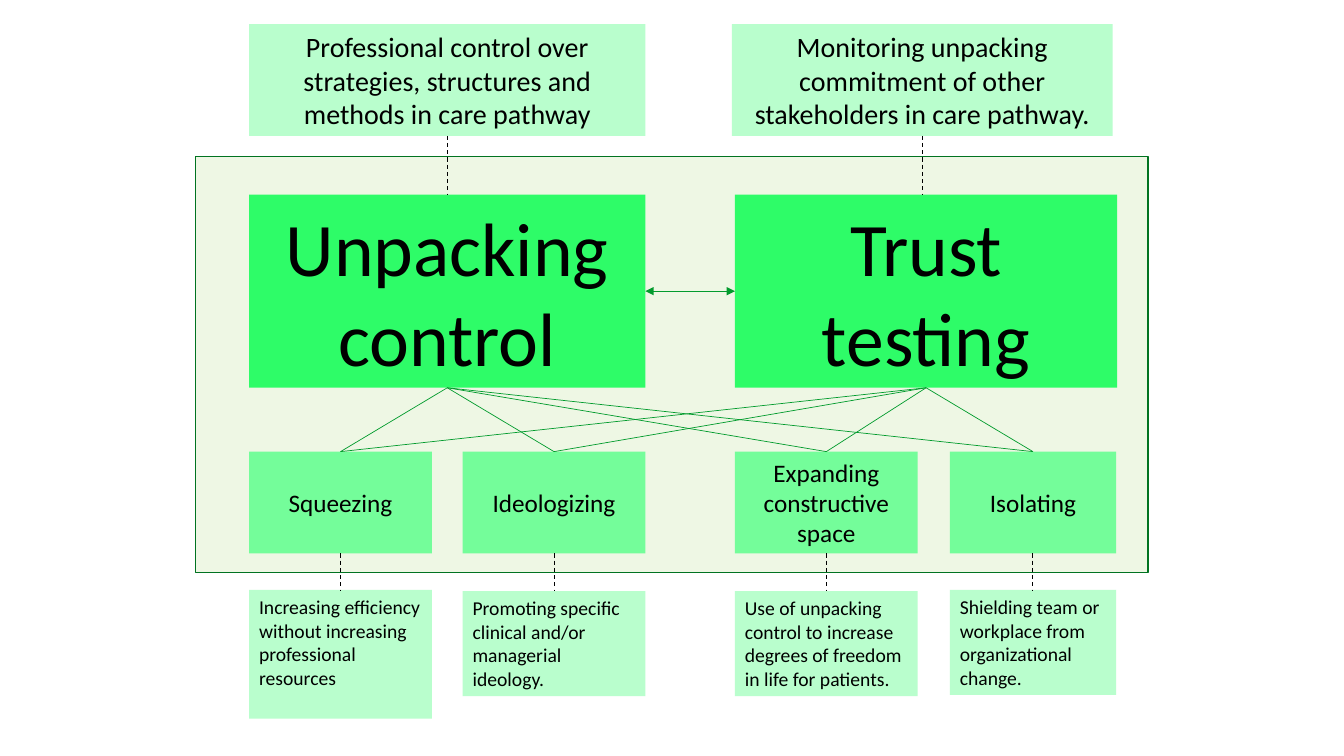
import pptx
import pptx.util
import pptx.dml.color
import pptx.enum.dml
import pptx.enum.shapes
import pptx.enum.text
import pptx.oxml.ns
import lxml.etree

Pt = pptx.util.Pt
RGBColor = pptx.dml.color.RGBColor
Align = pptx.enum.text.PP_ALIGN
Anchor = pptx.enum.text.MSO_ANCHOR

BLACK = RGBColor(0x00, 0x00, 0x00)
FRAME_FILL = RGBColor(0x92, 0xD0, 0x50)
FRAME_LINE = RGBColor(0x01, 0x73, 0x21)
LINK_GREEN = RGBColor(0x02, 0x9B, 0x2D)
STRONG_GREEN = RGBColor(0x2E, 0xFC, 0x68)
MEDIUM_GREEN = RGBColor(0x74, 0xFD, 0x9A)
PALE_GREEN = RGBColor(0xB9, 0xFE, 0xCD)

FRAME = (139.7, 111.6, 680.4, 297.4)
FRAME_OPACITY = 15

THEMES = [
    {"title": "Unpacking control", "left": 178, "width": 283,
     "note": "Professional control over strategies, structures and methods in care pathway",
     "note_left": 178, "note_width": 283},
    {"title": "Trust testing", "left": 525, "width": 273,
     "note": "Monitoring unpacking commitment of other stakeholders in care pathway.",
     "note_left": 522.8, "note_width": 272},
]
STRATEGIES = [
    {"title": "Squeezing", "left": 178, "width": 130.5, "note_top": 421.4, "note_height": 92,
     "note": "Increasing efficiency without increasing professional resources"},
    {"title": "Ideologizing", "left": 330.5, "width": 130.5, "note_top": 422.3, "note_height": 75,
     "note": "Promoting specific clinical and/or managerial ideology."},
    {"title": "Expanding constructive space", "left": 525, "width": 130.5,
     "note_top": 422.3, "note_height": 75,
     "note": "Use of unpacking control to increase degrees of freedom in life for patients."},
    {"title": "Isolating", "left": 678.5, "width": 118.7, "note_top": 421.4, "note_height": 75,
     "note": "Shielding team or workplace from organizational change."},
]
THEME_NOTE_TOP, THEME_NOTE_HEIGHT = 17.2, 79.8
THEME_TOP, THEME_HEIGHT = 139, 138
STRATEGY_TOP, STRATEGY_HEIGHT = 322.6, 72.7

THEME_STYLE = {"fill": STRONG_GREEN, "size": 54, "align": Align.CENTER, "anchor": Anchor.MIDDLE}
STRATEGY_STYLE = {**THEME_STYLE, "fill": MEDIUM_GREEN, "size": 18}
THEME_NOTE_STYLE = {**THEME_STYLE, "fill": PALE_GREEN, "size": 20}
STRATEGY_NOTE_STYLE = {"fill": PALE_GREEN, "size": 14, "align": Align.LEFT, "anchor": Anchor.TOP}


def set_all(target, values):
    for name, value in values.items():
        setattr(target, name, value)


def add_rectangle(page, bounds, fill):
    box = page.shapes.add_shape(pptx.enum.shapes.MSO_SHAPE.RECTANGLE, *map(Pt, bounds))
    box.shadow.inherit = False
    box.fill.solid()
    box.fill.fore_color.rgb = fill
    box.line.fill.background()
    return box


def add_frame(page):
    frame = add_rectangle(page, FRAME, FRAME_FILL)
    color = frame.fill._xPr.find(".//" + pptx.oxml.ns.qn("a:srgbClr"))
    lxml.etree.SubElement(color, pptx.oxml.ns.qn("a:alpha"), val=str(FRAME_OPACITY * 1000))
    frame.line.color.rgb = FRAME_LINE
    frame.line.width = Pt(1)


def add_text_box(page, bounds, text, style):
    box = add_rectangle(page, bounds, style["fill"])
    set_all(box.text_frame, {"word_wrap": True, "vertical_anchor": style["anchor"]})
    para = box.text_frame.paragraphs[0]
    para.alignment = style["align"]
    span = para.add_run()
    span.text = text
    set_all(span.font, {"name": "Calibri", "size": Pt(style["size"])})
    span.font.color.rgb = BLACK


def add_link(page, start, end, color=LINK_GREEN, width=0.5, dashed=False, arrows=False):
    link = page.shapes.add_connector(
        pptx.enum.shapes.MSO_CONNECTOR.STRAIGHT, *map(Pt, start + end))
    link.line.color.rgb = color
    link.line.width = Pt(width)
    if dashed:
        link.line.dash_style = pptx.enum.dml.MSO_LINE.DASH
    if arrows:
        outline = link.line._get_or_add_ln()
        for tag in ("a:headEnd", "a:tailEnd"):
            lxml.etree.SubElement(outline, pptx.oxml.ns.qn(tag), type="triangle")
    lxml.etree.SubElement(link._element.spPr, pptx.oxml.ns.qn("a:effectLst"))


def center(item, prefix=""):
    return item[prefix + "left"] + item[prefix + "width"] / 2


def main():
    deck = pptx.Presentation()
    set_all(deck, {"slide_width": Pt(960), "slide_height": Pt(540)})
    page = deck.slides.add_slide(deck.slide_layouts[6])
    add_frame(page)

    theme_bottom = THEME_TOP + THEME_HEIGHT
    for theme in THEMES:
        add_text_box(page, (theme["left"], THEME_TOP, theme["width"], THEME_HEIGHT),
                     theme["title"], THEME_STYLE)
        add_text_box(page, (theme["note_left"], THEME_NOTE_TOP,
                            theme["note_width"], THEME_NOTE_HEIGHT),
                     theme["note"], THEME_NOTE_STYLE)
        middle = center(theme, "note_")
        add_link(page, (middle, THEME_NOTE_TOP + THEME_NOTE_HEIGHT), (middle, THEME_TOP),
                 BLACK, 0.75, dashed=True)

    for strategy in STRATEGIES:
        left, width, middle = strategy["left"], strategy["width"], center(strategy)
        add_text_box(page, (left, STRATEGY_TOP, width, STRATEGY_HEIGHT),
                     strategy["title"], STRATEGY_STYLE)
        add_text_box(page, (left, strategy["note_top"], width, strategy["note_height"]),
                     strategy["note"], STRATEGY_NOTE_STYLE)
        add_link(page, (middle, STRATEGY_TOP + STRATEGY_HEIGHT), (middle, strategy["note_top"]),
                 BLACK, 0.75, dashed=True)
        for theme in THEMES:
            add_link(page, (center(theme), theme_bottom), (middle, STRATEGY_TOP))

    first, second = THEMES
    arrow_height = THEME_TOP + THEME_HEIGHT / 2
    add_link(page, (first["left"] + first["width"], arrow_height),
             (second["left"], arrow_height), arrows=True)
    deck.save("out.pptx")


if __name__ == "__main__":
    main()
